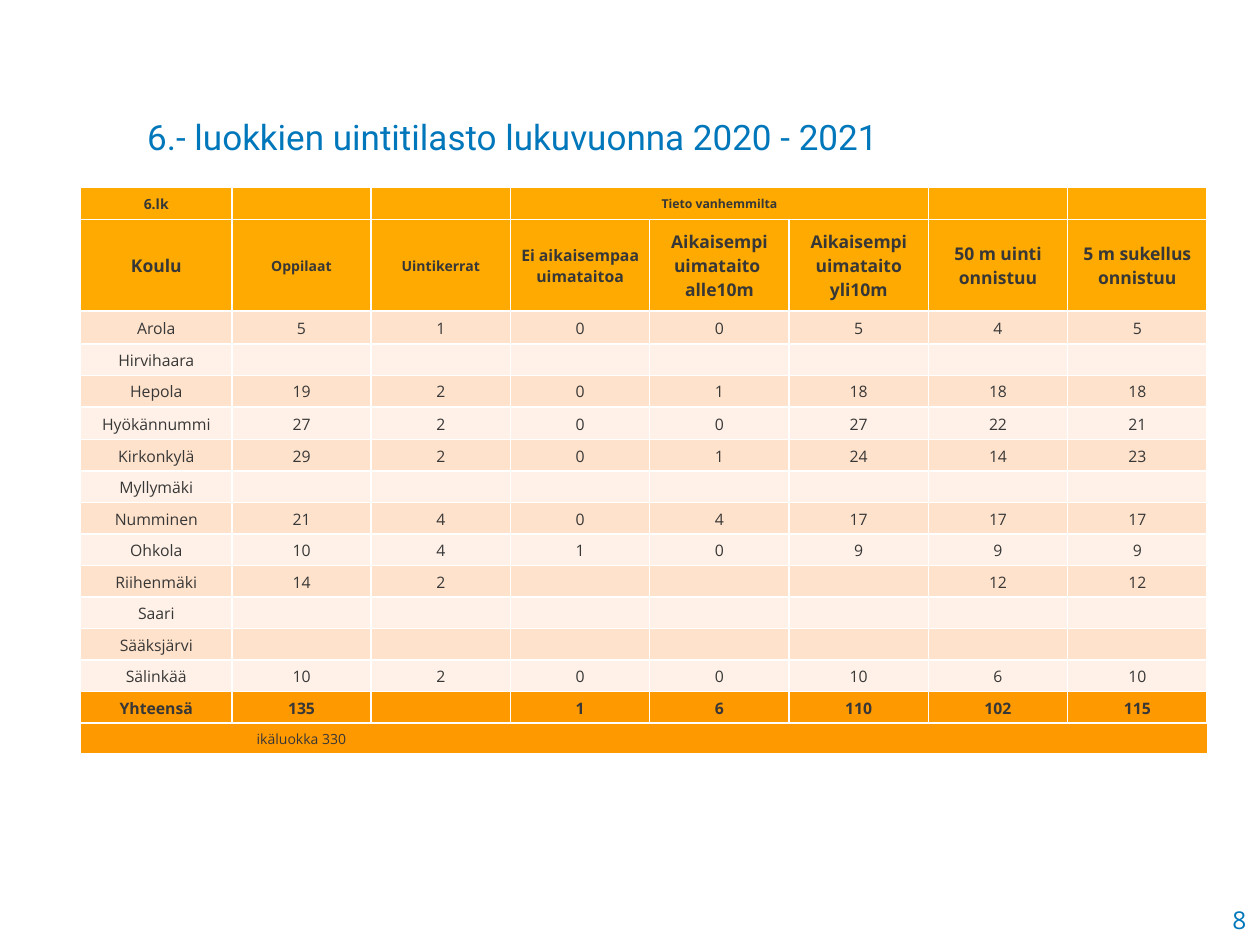
"""Build the slide with the swimming statistics of the sixth grades."""
from lxml import etree
from pptx import Presentation
from pptx.dml.color import RGBColor
from pptx.enum.text import MSO_ANCHOR, PP_ALIGN
from pptx.oxml.ns import qn
from pptx.util import Inches, Pt

LEFT, CENTER, RIGHT = PP_ALIGN.LEFT, PP_ALIGN.CENTER, PP_ALIGN.RIGHT
TOP, MIDDLE, BOTTOM = MSO_ANCHOR.TOP, MSO_ANCHOR.MIDDLE, MSO_ANCHOR.BOTTOM
PLAIN = "{2D5ABB26-0587-4C30-8999-92F81FD0307C}"
COLORS = {"blue": "0077BB", "ink": "373737", "head": "FFAA00", "total": "FF9900",
          "dark": "FFE2CB", "light": "FFF1E7", "line": "FFFFFF"}


def style(para, size, color, align, bold=False, face="Open Sans"):
    para.alignment = align
    font = para.font
    font.name, font.size, font.bold = face, Pt(size), bold
    font.color.rgb = RGBColor.from_string(COLORS[color])


def edge(cell, side, width):
    line = etree.SubElement(cell._tc.get_or_add_tcPr(), qn("a:ln" + side), w=str(Pt(width)))
    if width:
        fill = etree.SubElement(line, qn("a:solidFill"))
        etree.SubElement(fill, qn("a:srgbClr"), val=COLORS["line"])
    else:
        etree.SubElement(line, qn("a:noFill"))


prs = Presentation()
prs.slide_width, prs.slide_height = Inches(10), Inches(7.5)
slide = prs.slides.add_slide(prs.slide_layouts[6])

labels = [
    ("6.- luokkien uintitilasto lukuvuonna 2020 - 2021",
     (1.07, 0.82, 7.43, 0.48), 20, LEFT, BOTTOM, "Roboto"),
    ("8", (9.37, 7.13, 0.62, 0.34), 14, RIGHT, TOP, "Open Sans"),
]
for text, place, size, align, anchor, face in labels:
    frame = slide.shapes.add_textbox(*map(Inches, place)).text_frame
    frame.word_wrap = True
    frame.vertical_anchor = anchor
    frame.text = text
    style(frame.paragraphs[0], size, "blue", align, face=face)

rows = [
    ["6.lk", "", "", "Tieto vanhemmilta", "", "", "", ""],
    ["Koulu", "Oppilaat", "Uintikerrat", "Ei aikaisempaa uimataitoa",
     "Aikaisempi uimataito  alle10m", "Aikaisempi uimataito yli10m",
     "50 m uinti onnistuu", "5 m sukellus onnistuu"],
    ["Arola", "5", "1", "0", "0", "5", "4", "5"],
    ["Hirvihaara"] + [""] * 7,
    ["Hepola", "19", "2", "0", "1", "18", "18", "18"],
    ["Hyökännummi", "27", "2", "0", "0", "27", "22", "21"],
    ["Kirkonkylä", "29", "2", "0", "1", "24", "14", "23"],
    ["Myllymäki"] + [""] * 7,
    ["Numminen", "21", "4", "0", "4", "17", "17", "17"],
    ["Ohkola", "10", "4", "1", "0", "9", "9", "9"],
    ["Riihenmäki", "14", "2", "", "", "", "12", "12"],
    ["Saari"] + [""] * 7,
    ["Sääksjärvi"] + [""] * 7,
    ["Sälinkää", "10", "2", "0", "0", "10", "6", "10"],
    ["Yhteensä", "135", "", "1", "6", "110", "102", "115"],
    ["", "ikäluokka 330"] + [""] * 6,
]
sizes = {0: [8, 8, 8, 7, 7, 7, 8, 8], 1: [10, 8, 8, 9, 10, 10, 10, 10], 15: [8] * 8}
heights = {1: 0.73, 2: 0.26, 5: 0.26, 15: 0.24}
last = len(rows) - 1

table = slide.shapes.add_table(len(rows), 8, Inches(0.64), Inches(1.49),
                               Inches(8.94), Inches(4.5)).table
table._tbl.tblPr[0].text = PLAIN
table.first_row = table.horz_banding = False
for c, col in enumerate(table.columns):
    col.width = Inches(7.74 / 7 if c else 1.2)
table.cell(0, 3).merge(table.cell(0, 5))

for r, row in enumerate(rows):
    table.rows[r].height = Inches(heights.get(r, 0.25))
    if r < 2:
        tone = "head"
    elif r >= last - 1:
        tone = "total"
    else:
        tone = "light" if r % 2 else "dark"
    side = 0 if r == last else 1
    top = {0: 0, 2: 1.5}.get(r, 1)
    base = {1: 1.5, last: 0}.get(r, 1)
    for c, text in enumerate(row):
        cell = table.cell(r, c)
        for name, width in (("L", side), ("R", side), ("T", top), ("B", base)):
            edge(cell, name, width)
        cell.fill.solid()
        cell.fill.fore_color.rgb = RGBColor.from_string(COLORS[tone])
        cell.vertical_anchor = MIDDLE
        cell.margin_left = cell.margin_right = cell.margin_top = Inches(0.01)
        cell.margin_bottom = 0
        size = sizes.get(r, [9] * 8)[c]
        cell.text = text
        para = cell.text_frame.paragraphs[0]
        if not text:
            etree.SubElement(para._p, qn("a:endParaRPr"), sz=str(size * 100))
        style(para, size, "ink", CENTER, bold=r in (0, 1, last - 1))

prs.save("out.pptx")
